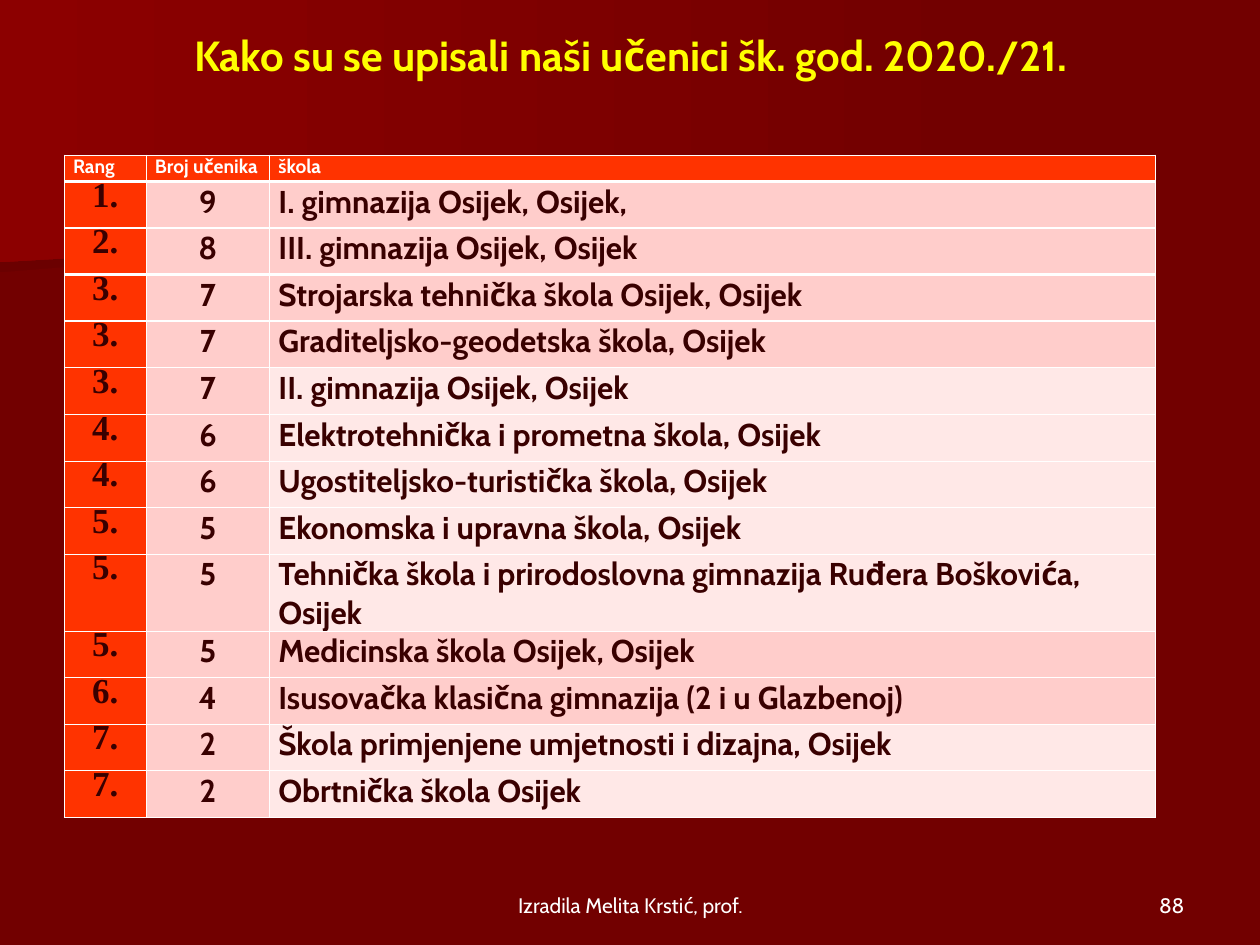
"""Build the slide listing the schools that pupils enrolled in for 2020./21."""
from lxml.etree import SubElement
from pptx import Presentation
from pptx.dml.color import RGBColor
from pptx.enum.text import MSO_ANCHOR as Anchor, PP_ALIGN as Align
from pptx.oxml.ns import qn
from pptx.util import Inches, Pt

BACKGROUND = RGBColor(0x72, 0x00, 0x00)
DARK_RED = RGBColor(0x6B, 0x00, 0x00)
LIGHT_RED = RGBColor(0x8C, 0x00, 0x00)
YELLOW = RGBColor(0xFF, 0xFF, 0x00)
WHITE = RGBColor(0xFF, 0xFF, 0xFF)
ORANGE = RGBColor(0xFF, 0x33, 0x00)
PINK = RGBColor(0xFF, 0xCD, 0xCB)
PALE_PINK = RGBColor(0xFF, 0xE8, 0xE7)
BROWN = RGBColor(0x39, 0x00, 0x00)

TITLE = "Kako su se upisali naši učenici šk. god. 2020./21."
AUTHOR = "Izradila Melita Krstić, prof."
PAGE_NUMBER = "88"
HEADINGS = ("Rang", "Broj učenika", "škola")
SCHOOLS = [
    ("1.", "9", "I. gimnazija Osijek, Osijek,", PINK),
    ("2.", "8", "III. gimnazija Osijek, Osijek", PINK),
    ("3.", "7", "Strojarska tehnička škola Osijek, Osijek", PINK),
    ("3.", "7", "Graditeljsko-geodetska škola, Osijek", PINK),
    ("3.", "7", "II. gimnazija Osijek, Osijek", PALE_PINK),
    ("4.", "6", "Elektrotehnička i prometna škola, Osijek", PALE_PINK),
    ("4.", "6", "Ugostiteljsko-turistička škola, Osijek", PALE_PINK),
    ("5.", "5", "Ekonomska i upravna škola, Osijek", PALE_PINK),
    ("5.", "5", "Tehnička škola i prirodoslovna gimnazija Ruđera Boškovića, Osijek", PALE_PINK),
    ("5.", "5", "Medicinska škola Osijek, Osijek", PINK),
    ("6.", "4", "Isusovačka klasična gimnazija (2 i u Glazbenoj)", PINK),
    ("7.", "2", "Škola primjenjene umjetnosti i dizajna, Osijek", PALE_PINK),
    ("7.", "2", "Obrtnička škola Osijek", PALE_PINK),
]
BANDS = [
    ([(7.78, 1.53), (0, 2.16), (0, 1.01), (7.79, 1.01), (7.78, 1.28)], DARK_RED),
    ([(7.91, 1.62), (0, 2.08), (0, 0), (7.92, 0)], LIGHT_RED),
]
COLUMN_WIDTHS = (0.65, 0.98, 7.03)
HEADING_HEIGHT, ROW_HEIGHT = 0.21, 0.37
THICK_RULES = 4
THIN, THICK = 0.45, 1.47


def add_band(slide, points, left_color):
    corners = [(Inches(x), Inches(y)) for x, y in points]
    builder = slide.shapes.build_freeform(*corners[0], scale=1.0)
    builder.add_line_segments(corners[1:], close=True)
    shape = builder.convert_to_shape()
    shape.shadow.inherit = False
    shape.line.fill.background()
    shape.fill.gradient()
    shape.fill.gradient_angle = 180
    for stop, color, position in zip(shape.fill.gradient_stops, (BACKGROUND, left_color), (0, 1)):
        stop.color.rgb = color
        stop.position = position


def write(paragraph, text, size, color, align=Align.LEFT, font="Cabin", bold=False, spacing=1.0):
    paragraph.alignment = align
    paragraph.line_spacing = spacing
    run = paragraph.add_run()
    run.text = text
    run.font.size = Pt(size)
    run.font.name = font
    run.font.bold = bold
    run.font.color.rgb = color


def add_text(slide, box, text, size, color, align, anchor, bold=False):
    frame = slide.shapes.add_textbox(*map(Inches, box)).text_frame
    frame.word_wrap = True
    frame.vertical_anchor = anchor
    write(frame.paragraphs[0], text, size, color, align, bold=bold)


def style_cell(cell, fill, top, bottom, margin_top=0):
    cell.margin_left = cell.margin_right = Inches(0.07)
    cell.margin_top, cell.margin_bottom = Inches(margin_top), 0
    properties = cell._tc.get_or_add_tcPr()
    for side, width in (("L", THIN), ("R", THIN), ("T", top), ("B", bottom)):
        line = SubElement(properties, qn(f"a:ln{side}"), w=str(Pt(width)))
        SubElement(SubElement(line, qn("a:solidFill")), qn("a:srgbClr"), val=str(WHITE))
    cell.fill.solid()
    cell.fill.fore_color.rgb = fill


def add_school_table(slide):
    height = HEADING_HEIGHT + ROW_HEIGHT * len(SCHOOLS)
    table = slide.shapes.add_table(
        len(SCHOOLS) + 1, len(HEADINGS), Inches(0.51), Inches(1.23),
        Inches(sum(COLUMN_WIDTHS)), Inches(height)).table
    table.first_row = table.horz_banding = False
    for column, width in zip(table.columns, COLUMN_WIDTHS):
        column.width = Inches(width)
    for index, row in enumerate(table.rows):
        row.height = Inches(ROW_HEIGHT if index else HEADING_HEIGHT)

    for column, heading in enumerate(HEADINGS):
        cell = table.cell(0, column)
        style_cell(cell, ORANGE, THIN, THICK)
        write(cell.text_frame.paragraphs[0], heading, 11, WHITE, bold=True, spacing=1.01)

    for index, (rank, count, school, tint) in enumerate(SCHOOLS, 1):
        top = THICK if index <= THICK_RULES else THIN
        bottom = THICK if index < THICK_RULES else THIN
        rank_cell, count_cell, school_cell = table.rows[index].cells
        style_cell(rank_cell, ORANGE, top, bottom)
        style_cell(count_cell, PINK, top, bottom, 0.01)
        style_cell(school_cell, tint, top, bottom, 0.01)
        write(rank_cell.text_frame.paragraphs[0], rank, 20, BROWN, Align.CENTER,
              "Times New Roman", True, 0.83)
        write(count_cell.text_frame.paragraphs[0], count, 18, BROWN, Align.CENTER, bold=True)
        write(school_cell.text_frame.paragraphs[0], school, 18, BROWN, bold=True)


def main():
    presentation = Presentation()
    presentation.slide_width, presentation.slide_height = Inches(10), Inches(7.5)
    slide = presentation.slides.add_slide(presentation.slide_layouts[6])
    slide.background.fill.solid()
    slide.background.fill.fore_color.rgb = BACKGROUND
    for points, left_color in BANDS:
        add_band(slide, points, left_color)
    add_text(slide, (0.16, 0.13, 9.69, 0.61), TITLE, 24, YELLOW, Align.CENTER, Anchor.MIDDLE, True)
    add_school_table(slide)
    add_text(slide, (3.42, 6.83, 3.17, 0.5), AUTHOR, 12, WHITE, Align.CENTER, Anchor.BOTTOM)
    add_text(slide, (7.17, 6.83, 2.33, 0.5), PAGE_NUMBER, 12, WHITE, Align.RIGHT, Anchor.BOTTOM)
    presentation.save("out.pptx")


if __name__ == "__main__":
    main()
